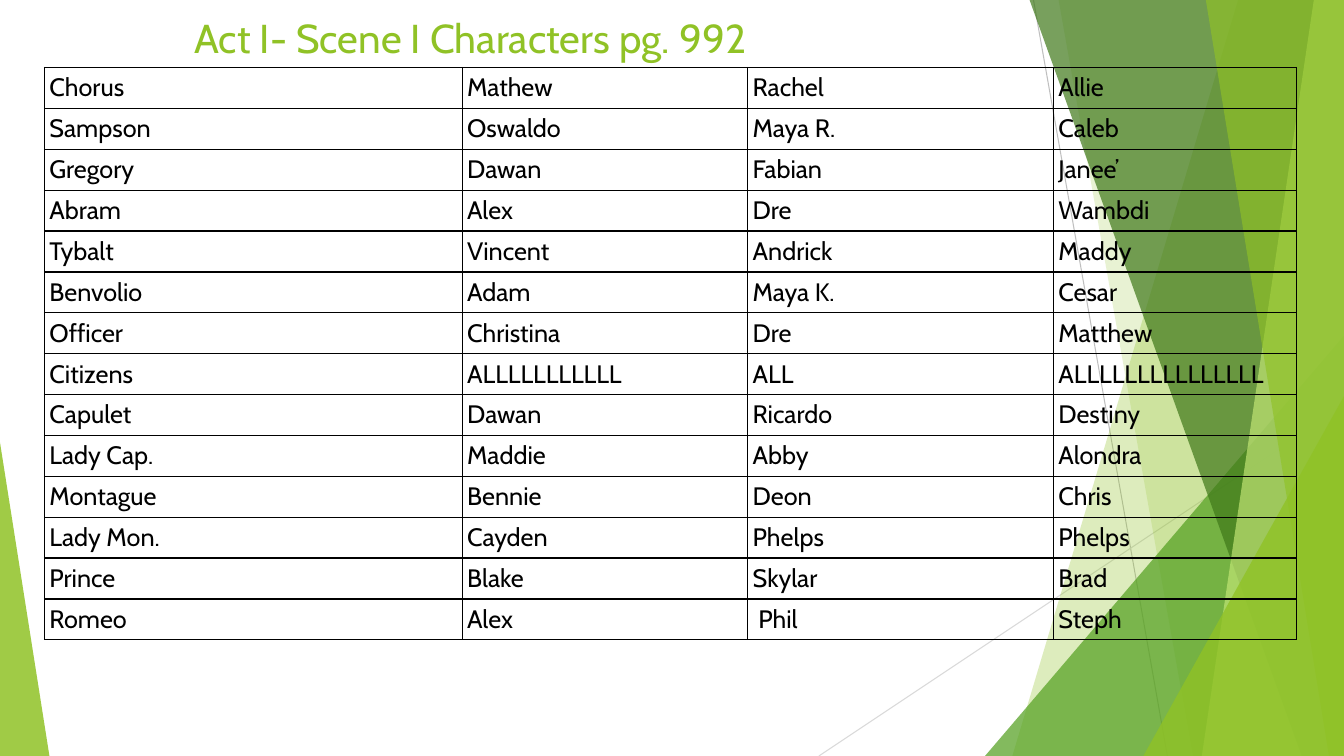
from lxml import etree
from pptx import Presentation
from pptx.dml.color import RGBColor
from pptx.enum.shapes import MSO_CONNECTOR, MSO_SHAPE
from pptx.enum.text import MSO_ANCHOR, MSO_AUTO_SIZE, PP_ALIGN
from pptx.oxml.ns import qn
from pptx.util import Inches, Pt

STRAIGHT = MSO_CONNECTOR.STRAIGHT
TRIANGLE = MSO_SHAPE.ISOSCELES_TRIANGLE
TOP = MSO_ANCHOR.TOP
LEFT = PP_ALIGN.LEFT
FIXED = MSO_AUTO_SIZE.NONE

BLACK = RGBColor(0x00, 0x00, 0x00)
LIME = RGBColor(0x90, 0xC2, 0x26)
PALE = RGBColor(0xC0, 0xE4, 0x74)
GREEN = RGBColor(0x54, 0xA0, 0x21)
DARK = RGBColor(0x3F, 0x78, 0x19)
GRAY = RGBColor(0xBF, 0xBF, 0xBF)
SILVER = RGBColor(0xD9, 0xD9, 0xD9)
FONT = "Cabin"

WIDTH, HEIGHT = Inches(13.33), Inches(7.5)
FAN_BOX = (Inches(9.77), 0, Inches(3.56), HEIGHT)
WEDGE_BOX = (0, Inches(4.39), Inches(0.49), Inches(3.11))
TITLE_BOX = (Inches(1.83), Inches(0.08), Inches(7.05), Inches(0.42))
TABLE_BOX = (Inches(0.44), Inches(0.67), Inches(12.42), Inches(5.68))

# Ends of each ray, in percent of the fan's box
RAYS = [
    ((13.5, 0), (50.8, 100), GRAY),
    ((100, 53.7), (-46.3, 100), SILVER),
]
# Left edge at top and bottom, in percent of the fan's width; color; opacity.
# A facet with no top edge is a triangle: its peak height stands third.
FACETS = [
    (70.5, 7.6, None, LIME, 30),
    (20.5, 57.9, None, LIME, 20),
    (None, 0, 55.6, GREEN, 72),
    (12.4, 88.2, None, DARK, 70),
    (91.6, 60.4, None, PALE, 70),
    (61.5, 95.8, None, LIME, 65),
    (None, 44.1, 47.6, LIME, 80),
]

COLS = [4.14, 2.83, 3.03, 2.41]
CAST = [
    ("Chorus", "Mathew", "Rachel", "Allie"),
    ("Sampson", "Oswaldo", "Maya R.", "Caleb"),
    ("Gregory", "Dawan", "Fabian", "Janee’"),
    ("Abram", "Alex", "Dre", "Wambdi"),
    ("Tybalt", "Vincent", "Andrick", "Maddy"),
    ("Benvolio", "Adam", "Maya K.", "Cesar"),
    ("Officer", "Christina", "Dre", "Matthew"),
    ("Citizens", "ALLLLLLLLLLL", "ALL", "ALLLLLLLLLLLLLLL"),
    ("Capulet", "Dawan", "Ricardo", "Destiny"),
    ("Lady Cap.", "Maddie", "Abby", "Alondra"),
    ("Montague", "Bennie", "Deon", "Chris"),
    ("Lady Mon.", "Cayden", "Phelps", "Phelps"),
    ("Prince", "Blake", "Skylar", "Brad"),
    ("Romeo", "Alex", " Phil", "Steph"),
]


def tint(shape, color, alpha):
    """Fill with a see-through color, without line or shadow."""
    shape.shadow.inherit = False
    shape.line.fill.background()
    shape.fill.solid()
    shape.fill.fore_color.rgb = color
    node = shape.fill._xPr.find(f"{qn('a:solidFill')}/{qn('a:srgbClr')}")
    etree.SubElement(node, qn("a:alpha"), val=str(alpha * 1000))


def add_wedge(shapes, box, peak, color, alpha):
    wedge = shapes.add_shape(TRIANGLE, *box)
    wedge.adjustments[0] = peak
    tint(wedge, color, alpha)


def add_fan(shapes, box):
    """Draw the rays and the overlapping facets at the right edge."""
    left, top, width, height = box
    right, floor = left + width, top + height

    def spot(x, y):
        return int(left + width * x / 100), int(top + height * y / 100)

    for start, end, color in RAYS:
        ray = shapes.add_connector(STRAIGHT, *spot(*start), *spot(*end))
        ray.line.color.rgb = color
        ray.line.width = Pt(0.75)
        etree.SubElement(ray._element.spPr, qn("a:effectLst"))

    for upper, lower, rise, color, alpha in FACETS:
        if rise:
            x, y = spot(lower, 100 - rise)
            add_wedge(shapes, (x, y, right - x, floor - y), 1, color, alpha)
        else:
            path = shapes.build_freeform(*spot(upper, 0))
            path.add_line_segments(
                [(right, top), (right, floor), spot(lower, 100)])
            tint(path.convert_to_shape(), color, alpha)


def add_title(slide, box, text):
    title = slide.shapes.title
    title.left, title.top, title.width, title.height = box
    frame = title.text_frame
    frame.text = text
    frame.auto_size = FIXED
    frame.vertical_anchor = TOP
    para = frame.paragraphs[0]
    para.alignment = LEFT
    para.font.name, para.font.size = FONT, Pt(28.8)
    para.font.color.rgb = LIME


def add_borders(cell):
    props = cell._tc.get_or_add_tcPr()
    for i, side in enumerate(("lnL", "lnR", "lnT", "lnB")):
        line = etree.Element(qn(f"a:{side}"), w=str(Pt(1)))
        fill = etree.SubElement(line, qn("a:solidFill"))
        etree.SubElement(fill, qn("a:srgbClr"), val=str(BLACK))
        props.insert(i, line)


def style_cell(cell, text):
    cell.text = text
    cell.fill.background()
    cell.vertical_anchor = TOP
    cell.margin_left = cell.margin_right = Inches(0.05)
    cell.margin_top = cell.margin_bottom = Inches(0.05)
    font = cell.text_frame.paragraphs[0].font
    font.name, font.size = FONT, Pt(18)
    font.color.rgb = BLACK
    add_borders(cell)


def add_cast(shapes, box):
    """Draw the table of roles and their readers."""
    table = shapes.add_table(len(CAST), len(COLS), *box).table
    table.first_row = table.horz_banding = False
    for col, share in zip(table.columns, COLS):
        col.width = int(box[2] * share / sum(COLS))
    for row, names in zip(table.rows, CAST):
        row.height = int(box[3] / len(CAST))
        for cell, name in zip(row.cells, names):
            style_cell(cell, name)


def main():
    deck = Presentation()
    deck.slide_width, deck.slide_height = WIDTH, HEIGHT
    slide = deck.slides.add_slide(deck.slide_layouts[5])
    add_fan(slide.shapes, FAN_BOX)
    add_wedge(slide.shapes, WEDGE_BOX, 0, LIME, 85)
    add_title(slide, TITLE_BOX, "Act I- Scene I Characters pg. 992")
    add_cast(slide.shapes, TABLE_BOX)
    deck.save("out.pptx")


if __name__ == "__main__":
    main()
